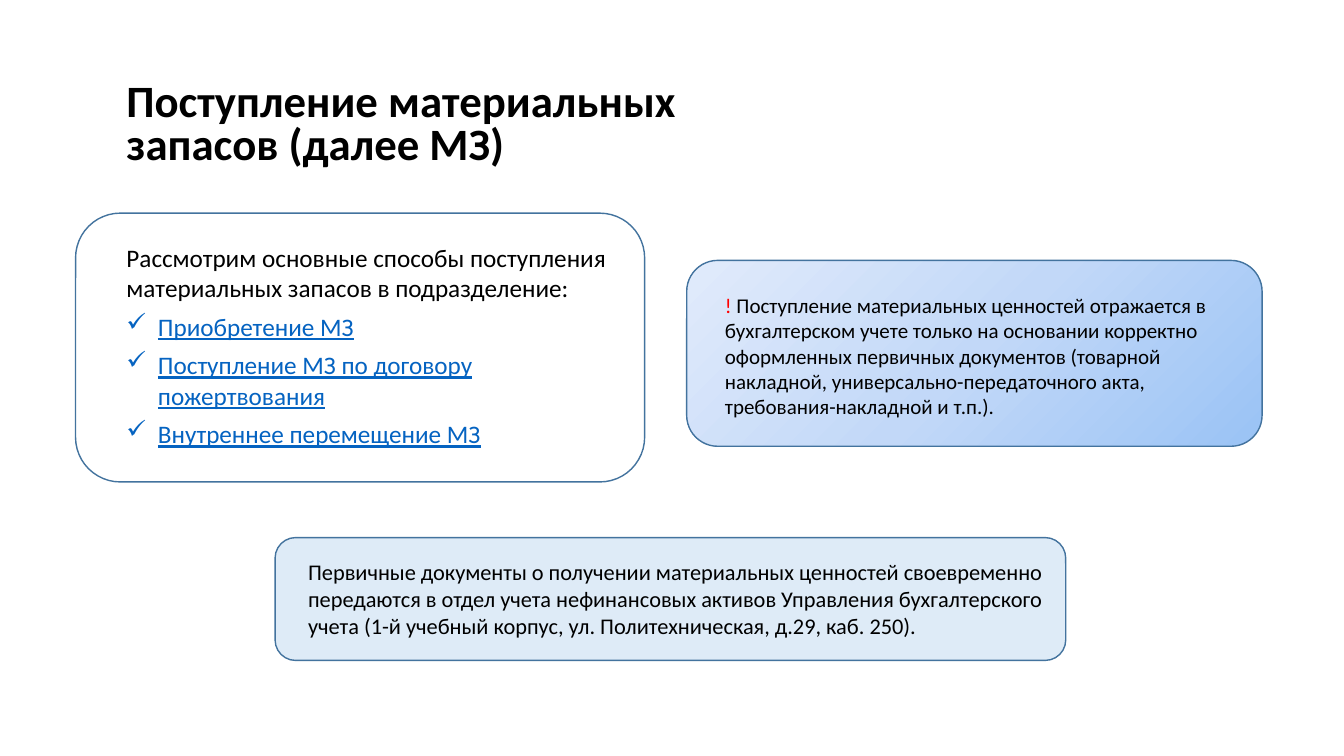
from copy import deepcopy
from dataclasses import dataclass, field

from lxml import etree
from pptx import Presentation
from pptx.dml.color import RGBColor
from pptx.enum.shapes import MSO_SHAPE
from pptx.enum.text import MSO_ANCHOR, MSO_AUTO_SIZE, PP_ALIGN
from pptx.oxml.ns import qn
from pptx.util import Emu, Pt

ROUNDED = MSO_SHAPE.ROUNDED_RECTANGLE
MIDDLE, TOP = MSO_ANCHOR.MIDDLE, MSO_ANCHOR.TOP
GROW, FIXED = MSO_AUTO_SIZE.SHAPE_TO_FIT_TEXT, MSO_AUTO_SIZE.NONE
LEFT = PP_ALIGN.LEFT

EMU_PER_PX = 9525
FONT = "Calibri"
BULLET_INDENT = 30
COLORS = {
    "text": "000000",
    "link": "0563C1",
    "alert": "FF0000",
    "outline": "43739E",
    "white": "FFFFFF",
    "pale": "DEEBF7",
}
GRADIENT = [(0, "9AC3F5"), (0.5, "C2D8F8"), (1, "E1EBFB")]
GRADIENT_ANGLE = 135


def px(n: int) -> Emu:
    return Emu(n * EMU_PER_PX)


def rgb(name: str) -> RGBColor:
    return RGBColor.from_string(COLORS[name])


@dataclass
class Box:
    left: int
    top: int
    width: int
    height: int

    def emu(self) -> list[Emu]:
        return [px(n) for n in (self.left, self.top, self.width, self.height)]


@dataclass
class Panel:
    box: Box
    fill: str | None = None  # colour name, "gradient" or None


@dataclass
class Run:
    text: str
    color: str = "text"
    font: dict = field(default_factory=dict)


@dataclass
class Para:
    runs: list[Run]
    format: dict = field(default_factory=dict)
    bullet: str = ""


@dataclass
class TextBlock:
    box: Box
    size: int
    paras: list[Para]
    fill: str | None = None
    anchor: MSO_ANCHOR = TOP
    auto_size: MSO_AUTO_SIZE = GROW


def link_item(text: str) -> Para:
    return Para([Run(text, "link", {"underline": True})],
                {"space_after": Pt(6)}, "✓")


PANELS = [
    Panel(Box(654, 248, 548, 177), "gradient"),
    Panel(Box(262, 512, 753, 117), "pale"),
    Panel(Box(72, 203, 542, 256)),
]

TEXTS = [
    # Title
    TextBlock(
        Box(111, 51, 577, 139), 32,
        [Para([Run("Поступление материальных запасов (далее МЗ)",
                   font={"bold": True})], {"line_spacing": 0.8})],
        "white", MIDDLE, FIXED),
    # Where the documents go
    TextBlock(
        Box(284, 527, 731, 87), 16,
        [Para([Run("Первичные документы о получении материальных ценностей "
                   "своевременно передаются в отдел учета нефинансовых "
                   "активов Управления бухгалтерского учета (1-й учебный "
                   "корпус, ул. Политехническая, д.29, каб. 250).")])]),
    # Ways of receipt
    TextBlock(
        Box(111, 226, 489, 241), 18,
        [Para([Run("Рассмотрим основные способы поступления материальных "
                   "запасов в подразделение:")], {"space_after": Pt(6)}),
         link_item("Приобретение МЗ"),
         link_item("Поступление МЗ по договору пожертвования"),
         link_item("Внутреннее перемещение МЗ")]),
    # Warning
    TextBlock(
        Box(681, 274, 520, 156), 15,
        [Para([Run("!", "alert"),
               Run(" Поступление материальных ценностей отражается в "
                   "бухгалтерском учете только на основании корректно "
                   "оформленных первичных документов (товарной накладной, "
                   "универсально-передаточного акта, "
                   "требования-накладной и т.п.).")],
              {"space_before": Pt(10)})]),
]


def set_format(target, values: dict) -> None:
    for name, value in values.items():
        setattr(target, name, value)


def fill_gradient(sp) -> None:
    sp.fill.gradient()
    sp.fill.gradient_angle = GRADIENT_ANGLE
    stop_list = next(sp._element.spPr.iter(qn("a:gsLst")))
    stop_list.append(deepcopy(stop_list[-1]))
    for stop, (position, color) in zip(sp.fill.gradient_stops, GRADIENT):
        stop.position = position
        stop.color.rgb = RGBColor.from_string(color)


def set_fill(sp, fill: str | None) -> None:
    if fill == "gradient":
        fill_gradient(sp)
    elif fill:
        sp.fill.solid()
        sp.fill.fore_color.rgb = rgb(fill)
    else:
        sp.fill.background()


def add_panel(s, panel: Panel) -> None:
    sp = s.shapes.add_shape(ROUNDED, *panel.box.emu())
    sp.shadow.inherit = False
    set_fill(sp, panel.fill)
    sp.line.color.rgb = rgb("outline")
    sp.line.width = Pt(1)


def add_bullet(p, char: str) -> None:
    pPr = p._p.get_or_add_pPr()
    pPr.set("marL", str(px(BULLET_INDENT)))
    pPr.set("indent", str(-px(BULLET_INDENT)))
    etree.SubElement(pPr, qn("a:buChar")).set("char", char)


def add_text(s, block: TextBlock) -> None:
    sp = s.shapes.add_textbox(*block.box.emu())
    set_fill(sp, block.fill)
    tf = sp.text_frame
    set_format(tf, {"word_wrap": True, "auto_size": block.auto_size,
                    "vertical_anchor": block.anchor})
    for i, para in enumerate(block.paras):
        p = tf.add_paragraph() if i else tf.paragraphs[0]
        set_format(p, {"alignment": LEFT, **para.format})
        if para.bullet:
            add_bullet(p, para.bullet)
        for run in para.runs:
            r = p.add_run()
            r.text = run.text
            set_format(r.font, {"name": FONT, "size": Pt(block.size),
                                **run.font})
            r.font.color.rgb = rgb(run.color)


def main() -> None:
    prs = Presentation()
    prs.slide_width, prs.slide_height = px(1280), px(720)
    s = prs.slides.add_slide(prs.slide_layouts[6])
    for panel in PANELS:
        add_panel(s, panel)
    for block in TEXTS:
        add_text(s, block)
    prs.save("out.pptx")


if __name__ == "__main__":
    main()
